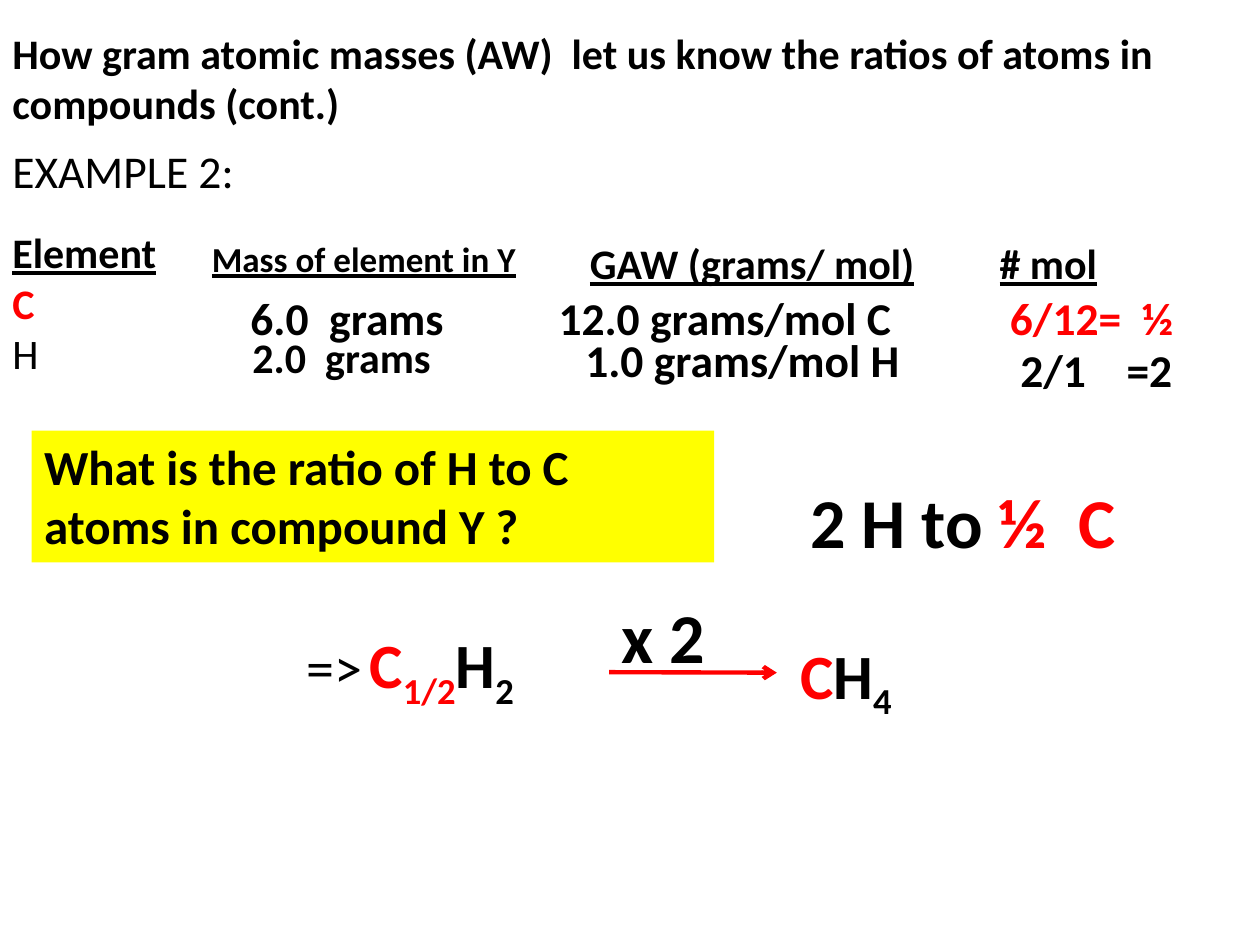
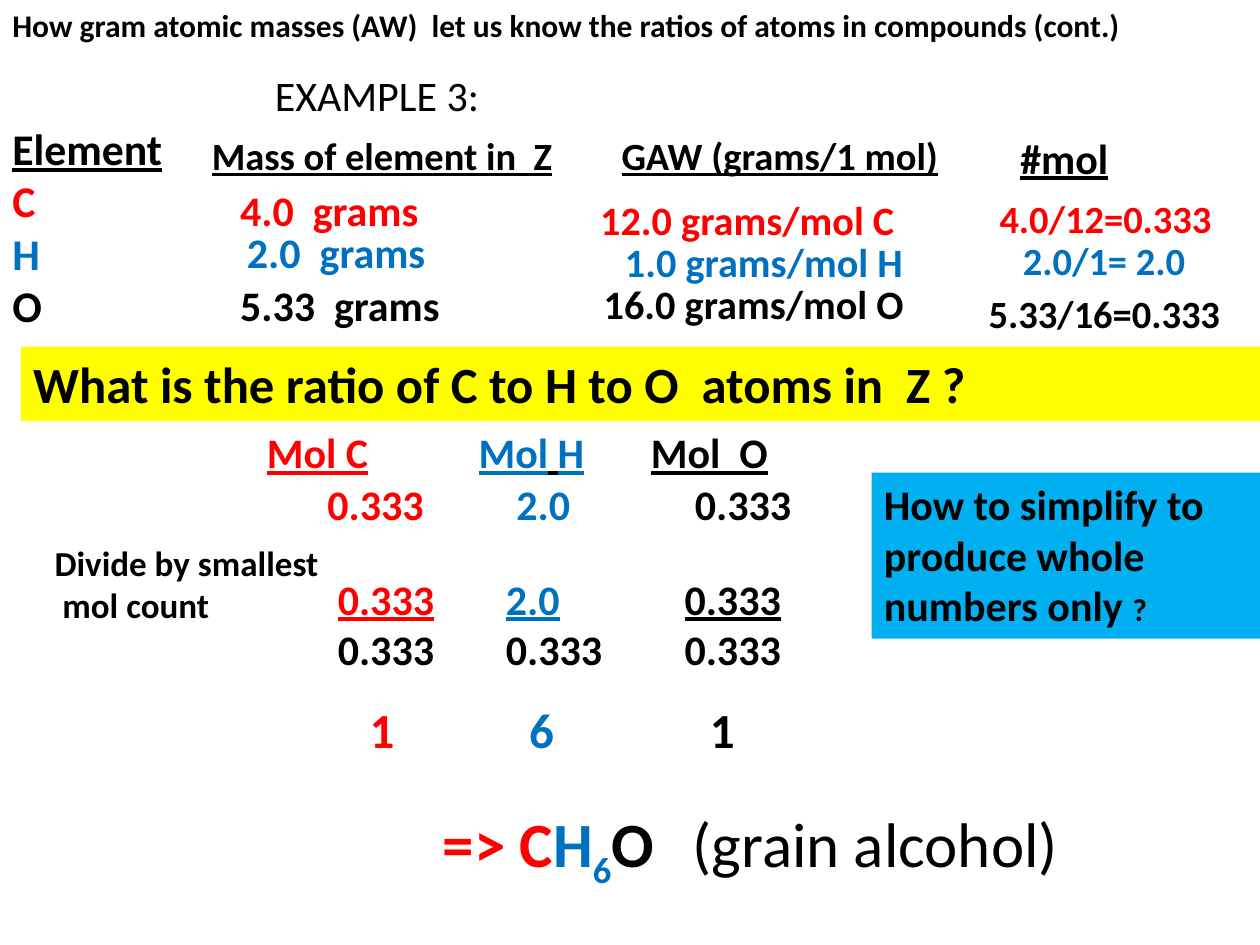
from lxml import etree
from pptx import Presentation
from pptx import util as u
from pptx.dml.color import RGBColor
from pptx.enum import shapes, text
from pptx.oxml.ns import qn

BLACK = RGBColor(0x00, 0x00, 0x00)
WHITE = RGBColor(0xFF, 0xFF, 0xFF)
RED = RGBColor(0xFF, 0x00, 0x00)
BLUE = RGBColor(0x00, 0x70, 0xC0)
CYAN = RGBColor(0x00, 0xB0, 0xF0)
YELLOW = RGBColor(0xFF, 0xFF, 0x00)
FONT = "Calibri"
TITLE = "How gram atomic masses (AW)  let us know the ratios of atoms in compounds (cont.)"


def write(slide, x, y, wide, size, *lines, rows=None, fill=None, tabs=(), bold=True):
    """Add a text box; a line is a list of runs (text, colour, marks, size).

    Marks: u = underlined, s = subscript, p = not bold. Lengths are in cm.
    """
    high = (rows or len(lines)) * size * 0.043 + 0.25
    box = slide.shapes.add_textbox(u.Cm(x), u.Cm(y), u.Cm(wide), u.Cm(high))
    if fill is not None:
        box.fill.solid()
        box.fill.fore_color.rgb = fill
    frame = box.text_frame
    frame.word_wrap = True
    frame.auto_size = text.MSO_AUTO_SIZE.SHAPE_TO_FIT_TEXT
    for i, line in enumerate(lines):
        para = frame.add_paragraph() if i else frame.paragraphs[0]
        if tabs:
            stops = etree.SubElement(para._p.get_or_add_pPr(), qn("a:tabLst"))
            for stop in tabs:
                etree.SubElement(stops, qn("a:tab"), pos=str(u.Cm(stop)), algn="l")
        runs = [(*run, "", None)[:4] if len(run) == 2 else (*run, None)[:4]
                for run in line]
        hue, under = runs[0][1], "u" in runs[0][2]
        font = para.font
        font.name, font.size, font.bold = FONT, u.Pt(size), bold
        font.underline = under
        font.color.rgb = hue
        for words, tint, marks, pts in runs:
            run = para.add_run()
            run.text = words
            if tint != hue:
                run.font.color.rgb = tint
            if ("u" in marks) != under:
                run.font.underline = "u" in marks
            if "p" in marks:
                run.font.bold = False
            if pts:
                run.font.size = u.Pt(pts)
            if "s" in marks:
                run._r.get_or_add_rPr().set("baseline", "-25000")


deck = Presentation()
deck.slide_width, deck.slide_height = u.Cm(25.4), u.Cm(19.05)
blank = deck.slide_layouts[6]

# Example 2: compound Y
one = deck.slides.add_slide(blank)
write(one, 0, 0.42, 25.4, 24, [(TITLE, BLACK)], rows=2)
write(one, 0, 2.75, 6.35, 26, [("EXAMPLE 2:", BLACK)], bold=False)
write(one, 0, 4.45, 4.23, 24, [("Element", BLACK, "u")], [("C", RED)],
      [("H", BLACK, "p")])
for x, y, wide, size, words, hue, marks in [
    (4.02, 4.66, 11.22, 20, "Mass of element in Y", BLACK, "u"),
    (4.8, 5.72, 5.4, 26, "6.0  grams", BLACK, ""),
    (4.84, 6.56, 5.4, 24, "2.0  grams", BLACK, ""),
    (11.64, 4.66, 8.47, 24, "GAW (grams/ mol)", BLACK, "u"),
    (11.01, 5.72, 8.26, 26, "12.0 grams/mol C", BLACK, ""),
    (11.55, 6.56, 7.73, 26, "1.0 grams/mol H", BLACK, ""),
    (20.11, 5.72, 4.45, 26, "6/12=  ½", RED, ""),
]:
    write(one, x, y, wide, size, [(words, hue, marks)])
write(one, 20.32, 6.77, 4.45, 26, [("2/1\t=2", BLACK)], tabs=[2.14])
write(one, 19.9, 4.66, 3.81, 24, [("# mol", BLACK, "u")], fill=WHITE)
write(one, 0.64, 8.68, 13.76, 28,
      [("What is the ratio of H to C atoms in compound Y ?", BLACK)],
      rows=2, fill=YELLOW)
write(one, 16.09, 9.53, 8.04, 40, [("2 H to ", BLACK), ("½  C", RED)])
write(one, 5.93, 12.49, 5.5, 36,
      [("=>", BLACK, "p", 32), (" ", BLACK, "p", 18), ("C", RED),
       ("1/2", RED, "s"), ("H", BLACK), ("2", BLACK, "s")])
arrow = one.shapes.add_connector(shapes.MSO_CONNECTOR.STRAIGHT, u.Cm(12.28),
                                 u.Cm(13.55), u.Cm(15.66), u.Cm(13.56))
arrow.line.color.rgb = RED
arrow.line.width = u.Pt(2.5)
etree.SubElement(arrow.line._get_or_add_ln(), qn("a:tailEnd"), type="arrow")
etree.SubElement(arrow._element.spPr, qn("a:effectLst"))
write(one, 15.88, 12.7, 4.02, 36, [("C", RED), ("H", BLACK), ("4", BLACK, "s")])
write(one, 12.28, 11.85, 3.6, 40, [("x 2", BLACK)])

# Example 3: compound Z
two = deck.slides.add_slide(blank)
write(two, 0, 0, 24.13, 18, [(TITLE, BLACK)])
write(two, 5.29, 1.27, 5.72, 24, [("EXAMPLE 3:", BLACK)], bold=False)
write(two, 0, 2.33, 4.45, 25, [("Element", BLACK, "u")], [("C", RED)],
      [("H", BLUE)], [("O", BLACK)])
for x, y, wide, size, words, hue, marks in [
    (4.02, 2.54, 9.95, 22, "Mass of element in  Z", BLACK, "u"),
    (4.59, 3.6, 5, 24, "4.0  grams", RED, ""),
    (4.73, 4.45, 5, 24, "2.0  grams", BLUE, ""),
    (4.59, 5.5, 5.4, 24, "5.33  grams", BLACK, ""),
    (12.28, 2.54, 7.83, 22, "GAW (grams/1 mol)", BLACK, "u"),
    (11.85, 3.81, 7.41, 23, "12.0 grams/mol C", RED, ""),
    (12.35, 4.66, 7.5, 23, "1.0 grams/mol H", BLUE, ""),
    (11.92, 5.5, 7.3, 23, "16.0 grams/mol O", BLACK, ""),
    (19.9, 3.81, 5.5, 22, "4.0/12=0.333", RED, ""),
    (20.37, 4.66, 4.3, 22, "2.0/1= 2.0", BLUE, ""),
    (19.68, 5.72, 5.72, 22, "5.33/16=0.333", BLACK, ""),
]:
    write(two, x, y, wide, size, [(words, hue, marks)])
write(two, 20.32, 2.54, 3.81, 24, [("#mol", BLACK, "u")], fill=WHITE)
write(two, 0.42, 6.99, 24.98, 29,
      [("What is the ratio of C to H to O  atoms in  Z ?", BLACK)], fill=YELLOW)

write(two, 5.13, 8.47, 11.6, 24,
      [("Mol C", RED, "u"), ("\t", BLACK), ("\t", BLACK, "u"), ("Mol", BLUE, "u"),
       (" ", BLACK, "u"), ("H\t", BLUE, "u"), ("Mol  O", BLACK, "u")],
      tabs=[3.3, 4.27, 7.74])
for x, mol, hue in [(6.35, "0.333", RED), (10.16, "2.0", BLUE),
                    (13.76, "0.333", BLACK)]:
    write(two, x, 9.53, 2.97, 24, [(mol, hue)])
for x, mol, hue in [(6.56, "0.333", RED), (9.95, "2.0", BLUE),
                    (13.55, "0.333", BLACK)]:
    write(two, x, 11.43, 2.97, 24, [(mol, hue, "u")], [("0.333", BLACK)])
write(two, 0.85, 10.8, 5.93, 20, [("Divide by smallest  mol count", BLACK)], rows=2)
write(two, 17.57, 9.53, 7.83, 24,
      [("How to simplify to produce whole numbers only ", BLACK),
       ("?", BLACK, "", 18)], rows=3, fill=CYAN)
write(two, 7.2, 13.97, 9.1, 28,
      [("1\t", RED), ("6\t", BLUE), ("1", BLACK)], tabs=[3.22, 6.86])
write(two, 8.68, 16.09, 15.66, 36,
      [("=> C", RED), ("H", BLUE), ("6", BLUE, "s"), ("O\t", BLACK),
       ("(grain alcohol)", BLACK, "p")], tabs=[5.03])

deck.save("out.pptx")
